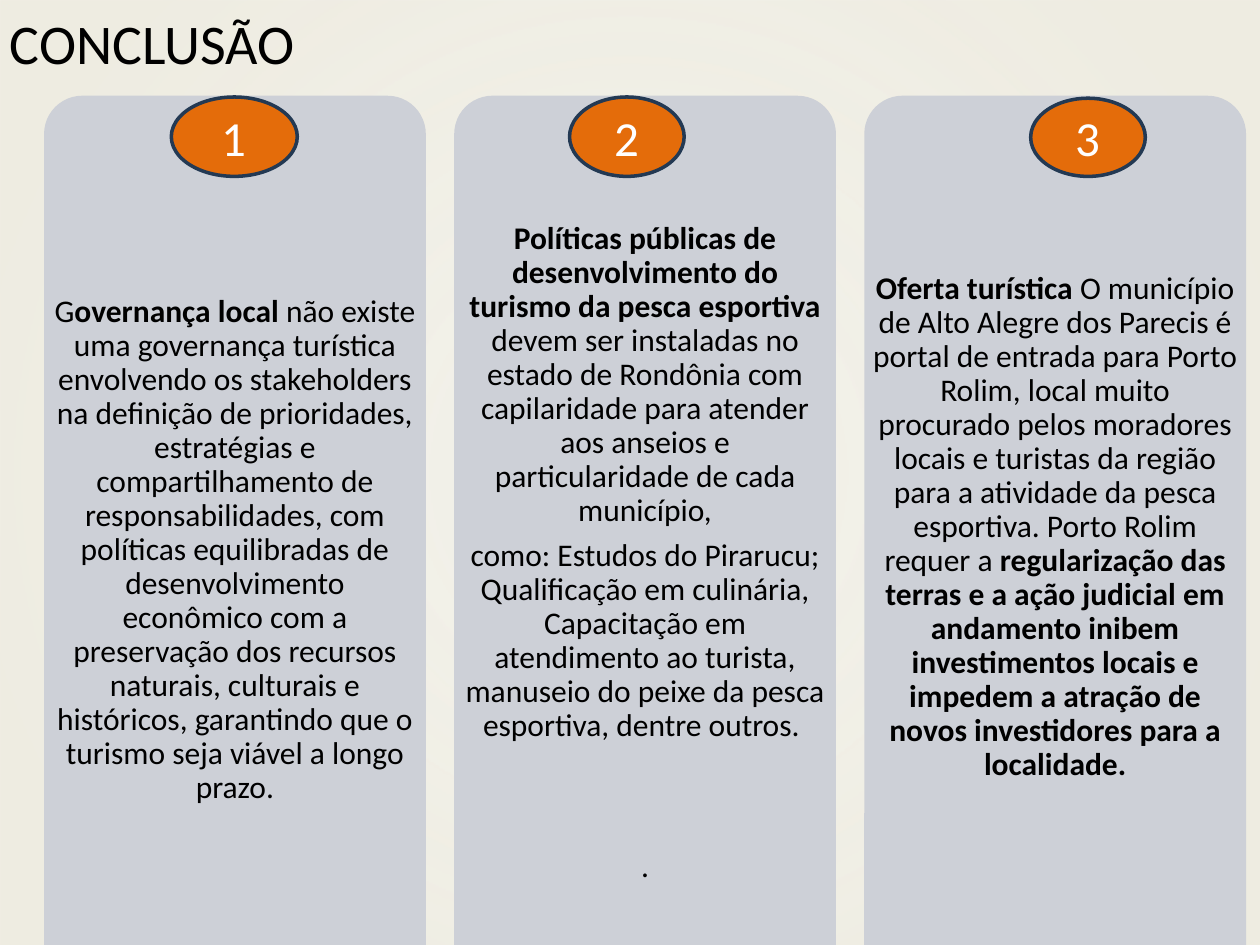
from lxml import etree
from pptx import Presentation
from pptx.dml.color import RGBColor
from pptx.enum.shapes import MSO_SHAPE
from pptx.enum.text import MSO_ANCHOR, PP_ALIGN
from pptx.oxml import parse_xml
from pptx.util import Inches, Pt

RECTANGLE, ROUNDED, OVAL = MSO_SHAPE.RECTANGLE, MSO_SHAPE.ROUNDED_RECTANGLE, MSO_SHAPE.OVAL
CENTER, LEFT = PP_ALIGN.CENTER, PP_ALIGN.LEFT
TOP, MIDDLE = MSO_ANCHOR.TOP, MSO_ANCHOR.MIDDLE

BLACK = RGBColor(0x00, 0x00, 0x00)
WHITE = RGBColor(0xFF, 0xFF, 0xFF)
CARD = RGBColor(0xCD, 0xD0, 0xD7)
ORANGE = RGBColor(0xE4, 0x6C, 0x0A)
NAVY = RGBColor(0x23, 0x39, 0x53)
CREAM = RGBColor(0xEE, 0xEC, 0xE1)
FONT = "Calibri"

TITLE = "CONCLUSÃO"
# Each paragraph is a list of (text, bold) runs.
CARDS = [
    {"text_top": 2.27, "badge": (1.36, 0.77, 1.0, 0.63), "paragraphs": [
        [("G", False), ("overnança local ", True),
         ("não existe uma governança turística envolvendo os stakeholders na definição "
          "de prioridades, estratégias e compartilhamento de responsabilidades, com "
          "políticas equilibradas de desenvolvimento econômico com a preservação dos "
          "recursos naturais, culturais e históricos, garantindo que o turismo seja "
          "viável a longo prazo.", False)],
    ]},
    {"text_top": 1.69, "badge": (4.52, 0.77, 0.91, 0.63), "paragraphs": [
        [("Políticas públicas de desenvolvimento do turismo da pesca esportiva ", True),
         ("devem ser instaladas no estado de Rondônia com capilaridade para atender aos "
          "anseios e particularidade de cada município,", False)],
        [("como: Estudos do Pirarucu; Qualificação em culinária, Capacitação em "
          "atendimento ao turista, manuseio do peixe da pesca esportiva, dentre "
          "outros. ", False)],
        [(".", False)],
    ]},
    {"text_top": 2.09, "badge": (8.18, 0.78, 0.91, 0.62), "paragraphs": [
        [("Oferta turística ", True),
         ("O município de Alto Alegre dos Parecis é portal de entrada para Porto Rolim, "
          "local muito procurado pelos moradores locais e turistas da região para a "
          "atividade da pesca esportiva. Porto Rolim requer a ", False),
         ("regularização das terras e a ação judicial em andamento inibem investimentos "
          "locais e impedem a atração de novos investidores para a localidade.", True)],
    ]},
]
CARD_LEFT, CARD_TOP, CARD_WIDTH, CARD_HEIGHT = 0.35, 0.76, 3.03, 7.21
CARD_PITCH = 3.255
CARD_INSET = 0.07
CLOSING_GAP = 55

GRADIENT = """
<a:gradFill xmlns:a="http://schemas.openxmlformats.org/drawingml/2006/main" rotWithShape="1">
  <a:gsLst>{stops}</a:gsLst>
  <a:path path="circle"><a:fillToRect l="50000" t="50000" r="50000" b="50000"/></a:path>
</a:gradFill>"""
STOP = ('<a:gs pos="{}000"><a:srgbClr val="{}">'
        '<a:alpha val="{}000"/></a:srgbClr></a:gs>')


def add_shape(slide, kind, box, color, line=None):
    shape = slide.shapes.add_shape(kind, *map(Inches, box))
    shape.shadow.inherit = False
    shape.fill.solid()
    shape.fill.fore_color.rgb = color
    if line is None:
        shape.line.fill.background()
    else:
        shape.line.color.rgb = line
        shape.line.width = Pt(2)
    return shape


def add_background(slide, width, height):
    shape = add_shape(slide, RECTANGLE, (0, 0, width, height), CREAM)
    stops = "".join(STOP.format(position, CREAM, opacity)
                    for position, opacity in [(10, 68), (85, 97)])
    properties = shape.fill._xPr
    solid = properties.find("{*}solidFill")
    properties.replace(solid, parse_xml(etree.tostring(
        etree.fromstring(GRADIENT.format(stops=stops)))))


def write(shape, paragraphs, size, color=BLACK, alignment=CENTER, anchor=MIDDLE,
          line_spacing=1.0, space_after=0):
    frame = shape.text_frame
    frame.word_wrap = True
    frame.vertical_anchor = anchor
    for index, runs in enumerate(paragraphs):
        paragraph = frame.paragraphs[0] if index == 0 else frame.add_paragraph()
        paragraph.alignment = alignment
        paragraph.line_spacing = line_spacing
        paragraph.space_after = Pt(space_after)
        for text, bold in runs:
            run = paragraph.add_run()
            run.text = text
            run.font.name = FONT
            run.font.size = Pt(size)
            run.font.bold = bold
            run.font.color.rgb = color
    return frame


def add_card(slide, number, card):
    left = CARD_LEFT + (number - 1) * CARD_PITCH
    panel = add_shape(slide, ROUNDED, (left, CARD_TOP, CARD_WIDTH, CARD_HEIGHT), CARD)
    panel.adjustments[0] = 0.1

    text_top = card["text_top"]
    box = slide.shapes.add_textbox(*map(Inches, (left, text_top, CARD_WIDTH, 7.2 - text_top)))
    frame = write(box, card["paragraphs"], 18, anchor=TOP, line_spacing=0.9, space_after=6.3)
    frame.margin_left = frame.margin_right = Inches(CARD_INSET)
    frame.margin_top = frame.margin_bottom = Inches(CARD_INSET)
    if len(card["paragraphs"]) > 1:
        frame.paragraphs[-1].space_before = Pt(CLOSING_GAP)


def main():
    presentation = Presentation()
    presentation.slide_width, presentation.slide_height = Inches(10), Inches(7.5)
    slide = presentation.slides.add_slide(presentation.slide_layouts[6])
    add_background(slide, 10, 7.5)

    title = slide.shapes.add_textbox(*map(Inches, (-0.02, -0.34, 3.76, 1.42)))
    write(title, [[(TITLE, False)]], 32, alignment=LEFT, line_spacing=0.9)

    for number, card in enumerate(CARDS, 1):
        add_card(slide, number, card)
    for number, card in enumerate(CARDS, 1):
        badge = add_shape(slide, OVAL, card["badge"], ORANGE, NAVY)
        write(badge, [[(str(number), False)]], 28, WHITE)

    presentation.save("out.pptx")


if __name__ == "__main__":
    main()
